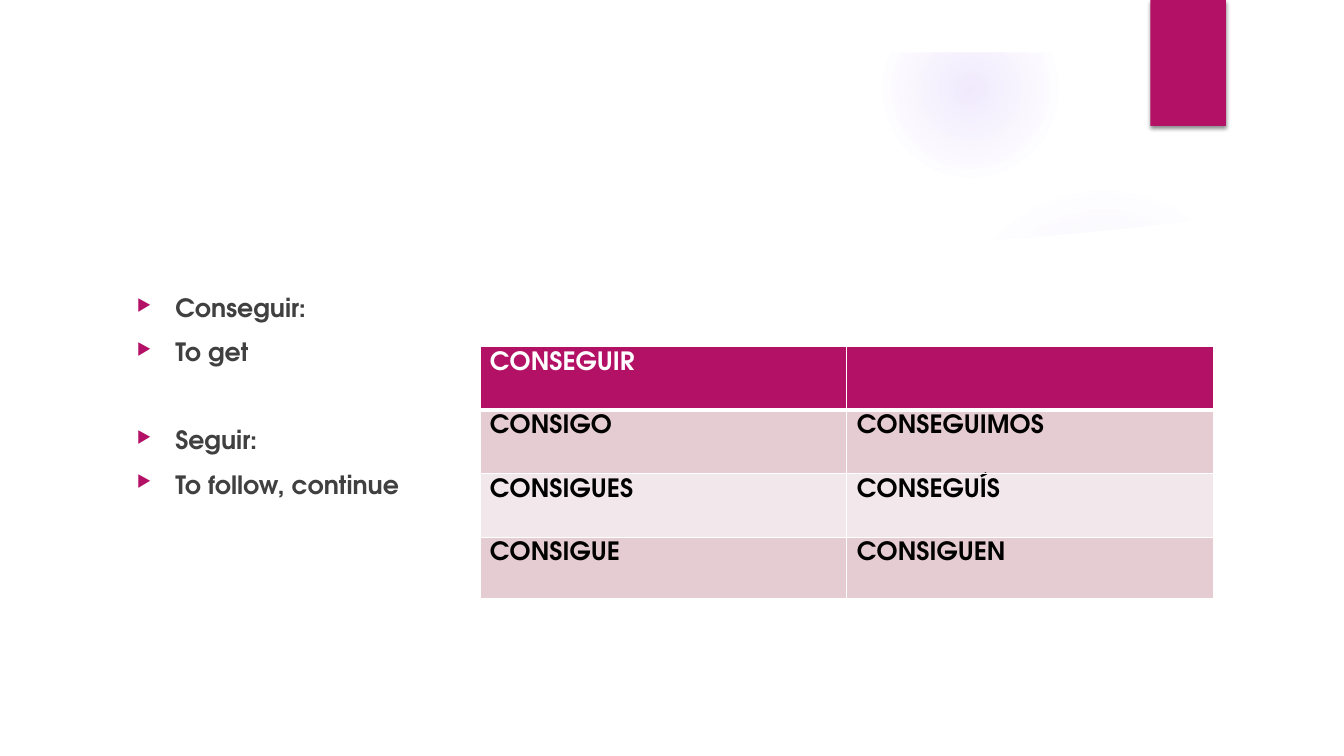
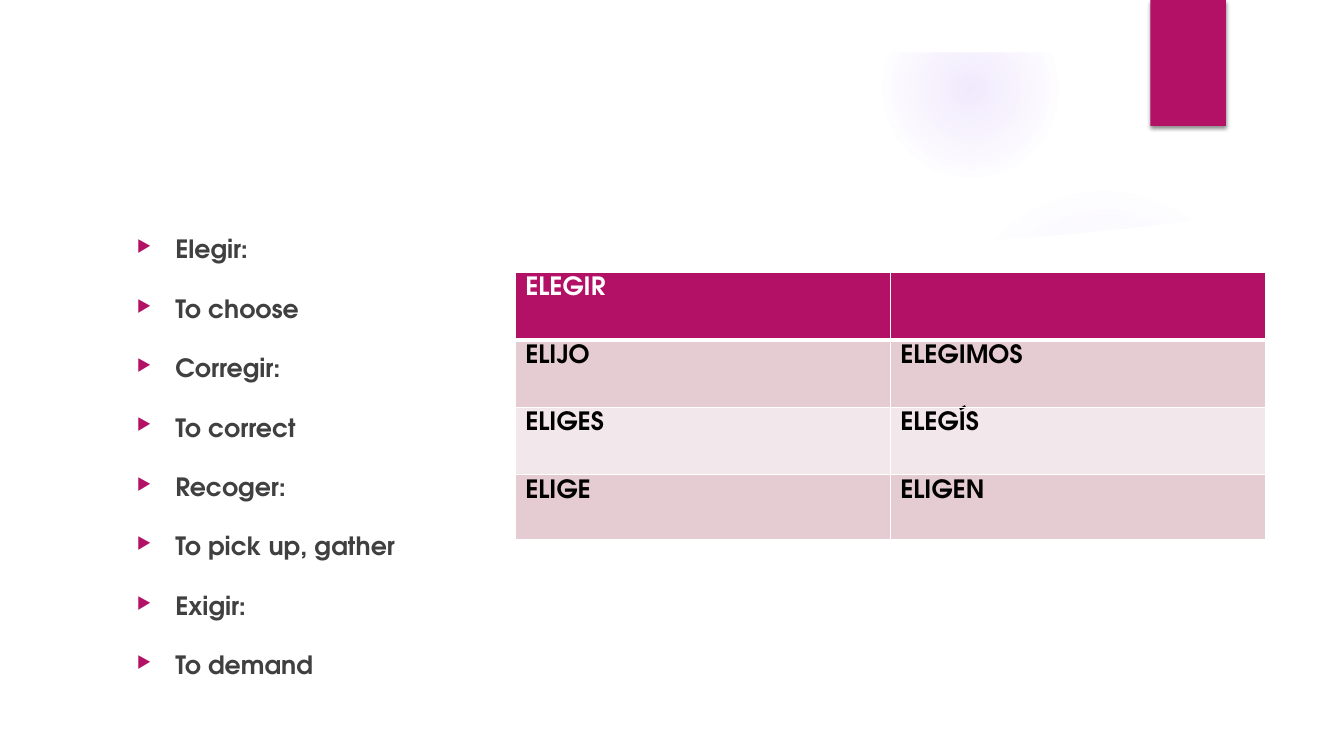
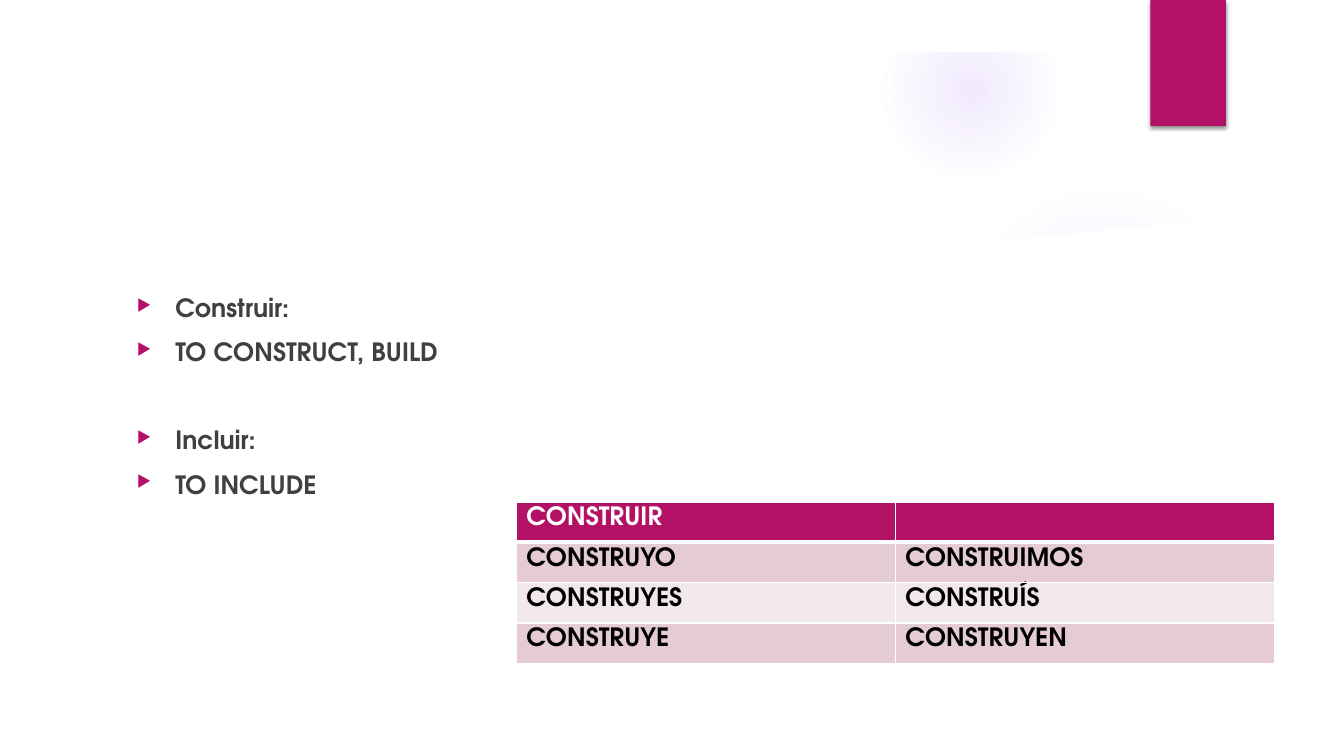
from pptx import Presentation
from pptx.dml.color import RGBColor
from pptx.enum.shapes import MSO_SHAPE as SHAPE
from pptx.oxml import parse_xml
from pptx.oxml.ns import nsdecls, qn
from pptx.util import Inches, Pt

MAGENTA, WHITE, BLACK, GREY, VIOLET = "B31166", "FFFFFF", "000000", "404040", "9B6BF2"
ROW_TINTS = [MAGENTA, "E5CCD3", "F2E7EA", "E5CCD3"]
LETTERING = {"name": "TeX Gyre Adventor", "size": Pt(18), "bold": True}

GLOWS = [
    (9.41, 1.83, 3.08, [(0, 7), (36, 6), (69, 0)]),
    (8.75, 0.01, 1.75, [(0, 14), (36, 7), (73, 0)]),
]
VEIL = [(9.34, 2.5), (10.6, 2.45), (12.89, 2.14), (12.83, 1.66), (12.25, 1.85),
        (11.67, 2), (11.09, 2.14), (10.53, 2.25), (9.99, 2.34), (9.3, 2.43)]
PANEL = [(0.5, 2.04), (0.5, 7), (12.84, 7), (12.84, 2.04), (12, 2.17), (11.16, 2.27),
         (10.32, 2.35), (9.49, 2.41), (8.67, 2.45), (7.86, 2.47), (7.08, 2.48),
         (6.32, 2.47), (5.59, 2.46), (4.88, 2.43), (4.01, 2.38), (3.21, 2.33),
         (2.49, 2.27), (1.87, 2.21), (1.35, 2.15), (0.79, 2.08)]

LESSONS = [
    {
        "meanings": [["Conseguir:", "To get"], ["Seguir:", "To follow, continue"]],
        "list_box": (1.26, 2.85, 9.65, 3.74), "spacing": 1.0,
        "verb_at": (4.76, 3.44), "column": 3.64, "row": 0.63, "last_row": 0.61,
        "forms": [("CONSEGUIR", ""), ("CONSIGO", "CONSEGUIMOS"),
                  ("CONSIGUES", "CONSEGUÍS"), ("CONSIGUE", "CONSIGUEN")],
    },
    {
        "meanings": [["Elegir:", "To choose", "Corregir:", "To correct",
                      "Recoger:", "To pick up, gather", "Exigir:", "To demand"]],
        "list_box": (1.26, 2.12, 9.65, 5.12), "spacing": 1.5,
        "verb_at": (5.11, 2.7), "column": 3.72, "row": 0.67, "last_row": 0.64,
        "forms": [("ELEGIR", ""), ("ELIJO", "ELEGIMOS"),
                  ("ELIGES", "ELEGÍS"), ("ELIGE", "ELIGEN")],
    },
    {
        "meanings": [["Construir:", "TO CONSTRUCT, BUILD"], ["Incluir:", "TO INCLUDE"]],
        "list_box": (1.26, 2.85, 9.65, 3.74), "spacing": 1.0,
        "verb_at": (5.12, 4.98), "column": 3.76, "row": 0.35, "last_row": 0.35,
        "forms": [("CONSTRUIR", ""), ("CONSTRUYO", "CONSTRUIMOS"),
                  ("CONSTRUYES", "CONSTRUÍS"), ("CONSTRUYE", "CONSTRUYEN")],
    },
]


def paint(fill, colour):
    fill.solid()
    fill.fore_color.rgb = RGBColor.from_string(colour)


def drawing(tag, attributes="", inner=""):
    return parse_xml(f"<a:{tag} {nsdecls('a')} {attributes}>{inner}</a:{tag}>")


prs = Presentation()
prs.slide_width, prs.slide_height = Inches(13.33), Inches(7.5)

for lesson in LESSONS:
    slide = prs.slides.add_slide(prs.slide_layouts[6])
    shapes = slide.shapes

    for left, top, size, stops in GLOWS:
        glow = shapes.add_shape(SHAPE.OVAL, Inches(left), Inches(top), Inches(size), Inches(size))
        glow.shadow.inherit = False
        glow.line.fill.background()
        glow.fill.background()
        stop_list = "".join(
            f'<a:gs pos="{pos * 1000}"><a:srgbClr val="{VIOLET}">'
            f'<a:alpha val="{alpha * 1000}"/></a:srgbClr></a:gs>' for pos, alpha in stops)
        centre = '<a:fillToRect l="50000" t="50000" r="50000" b="50000"/>'
        properties = glow.element.spPr
        properties.replace(properties.find(qn("a:noFill")), drawing(
            "gradFill", 'rotWithShape="1"',
            f'<a:gsLst>{stop_list}</a:gsLst><a:path path="circle">{centre}</a:path>'))

    for outline, opacity in ((VEIL, 20), (PANEL, 100)):
        corners = [(Inches(x), Inches(y)) for x, y in outline]
        builder = shapes.build_freeform(*corners[0])
        builder.add_line_segments(corners[1:], close=True)
        cover = builder.convert_to_shape()
        cover.shadow.inherit = False
        cover.line.fill.background()
        paint(cover.fill, WHITE)
        if opacity < 100:
            tint = cover.element.spPr.find(qn("a:solidFill"))[0]
            tint.append(drawing("alpha", f'val="{opacity * 1000}"'))

    border = shapes.add_shape(SHAPE.FRAME, 0, 0, prs.slide_width, prs.slide_height)
    border.adjustments[0] = 0.52 / 7.5
    ribbon = shapes.add_shape(SHAPE.RECTANGLE, Inches(11.41), 0, Inches(0.75), Inches(1.25))
    for part, colour in ((border, WHITE), (ribbon, MAGENTA)):
        part.shadow.inherit = False
        part.line.fill.background()
        paint(part.fill, colour)
    ribbon.element.spPr.find(qn("a:effectLst")).append(drawing(
        "outerShdw", f'blurRad="{Pt(3)}" dist="{Pt(2)}" dir="5400000" rotWithShape="0"',
        f'<a:srgbClr val="{BLACK}"><a:alpha val="45000"/></a:srgbClr>'))

    meanings = shapes.add_textbox(*map(Inches, lesson["list_box"])).text_frame
    meanings.word_wrap = True
    paragraph = meanings.paragraphs[0]
    for g, group in enumerate(lesson["meanings"]):
        for i, meaning in enumerate(group):
            if g or i:
                paragraph = meanings.add_paragraph()
                paragraph.space_before = Pt(10) if i else Pt(41.4)
            paragraph.line_spacing = lesson["spacing"]
            layout = paragraph._p.get_or_add_pPr()
            layout.set("marL", str(Inches(0.38)))
            layout.set("indent", str(Inches(-0.38)))
            layout.append(drawing("buClr", inner=f'<a:srgbClr val="{MAGENTA}"/>'))
            layout.append(drawing("buSzPct", 'val="65000"'))
            layout.append(drawing("buChar", 'char="▶"'))
            run = paragraph.add_run()
            run.text = meaning
            for key, value in LETTERING.items():
                setattr(run.font, key, value)
            paint(run.font.fill, GREY)

    forms = lesson["forms"]
    left, top = lesson["verb_at"]
    conjugation = shapes.add_table(
        len(forms), 2, Inches(left), Inches(top),
        Inches(2 * lesson["column"]), Inches(len(forms) * lesson["row"])).table
    conjugation.rows[len(forms) - 1].height = Inches(lesson["last_row"])
    for r, pair in enumerate(forms):
        for c, form in enumerate(pair):
            cell = conjugation.cell(r, c)
            edges = {"lnL": 1, "lnR": 1, "lnT": 3 if r == 1 else 1, "lnB": 3 if r == 0 else 1}
            for edge, width in edges.items():
                cell._tc.get_or_add_tcPr().append(drawing(
                    edge, f'w="{Pt(width)}"',
                    f'<a:solidFill><a:srgbClr val="{WHITE}"/></a:solidFill>'))
            paint(cell.fill, ROW_TINTS[r])
            if form:
                run = cell.text_frame.paragraphs[0].add_run()
                run.text = form
                for key, value in LETTERING.items():
                    setattr(run.font, key, value)
                paint(run.font.fill, BLACK if r else WHITE)

prs.save("out.pptx")
